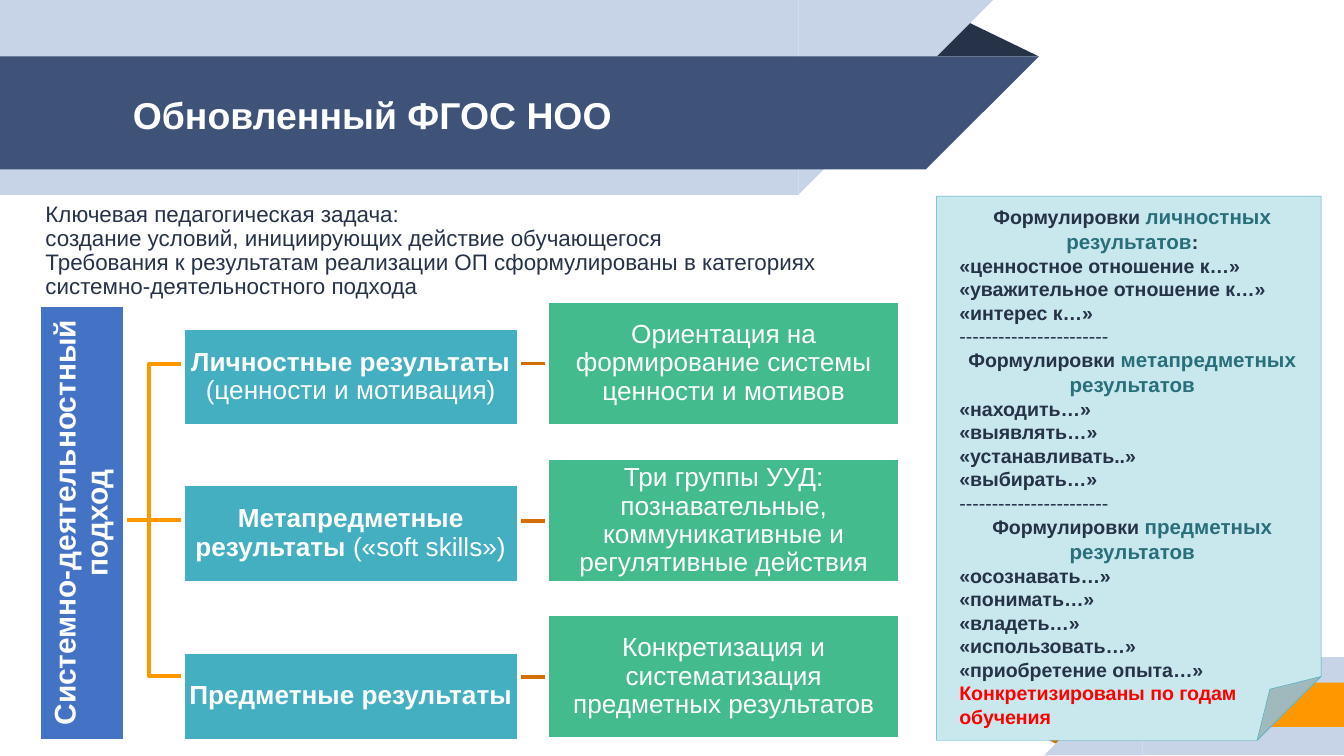
from pptx import Presentation
from pptx.dml.color import RGBColor
from pptx.enum.shapes import MSO_CONNECTOR as CONN, MSO_SHAPE as SHAPE
from pptx.enum.text import MSO_ANCHOR as ANCHOR, PP_ALIGN as ALIGN
from pptx.oxml.ns import qn
from pptx.oxml import parse_xml
from pptx.util import Pt

PX = 9144  # 100 px to the inch
NAVY, BLUE, PALE = "263248", "3F5378", "C7D3E6"
ORANGE, RUST, WHITE = "FF9800", "D26F00", "FFFFFF"
TEAL, GREEN, ROOT_BLUE = "43AFC0", "43BB8D", "4472C4"
DARK_TEAL, MINT, RED = "296F7B", "C9E8ED", "FF0000"
EFFECTS = '<a:effectLst xmlns:a="http://schemas.openxmlformats.org/drawingml/2006/main"/>'


def emu(*lengths):
    return [n * PX for n in lengths]


def rgb(value):
    return RGBColor.from_string(value)


def write(tf, paras, size=12, color=WHITE, bold=False, align=ALIGN.LEFT,
          spacing=None, anchor=ANCHOR.TOP, inset=(10, 5)):
    """Fill a frame; a paragraph is (runs, align or None), a run (text, overrides)."""
    tf.word_wrap = True
    tf.vertical_anchor = anchor
    tf.margin_left = tf.margin_right = inset[0] * PX
    tf.margin_top = tf.margin_bottom = inset[1] * PX
    for i, (runs, own_align) in enumerate(paras):
        p = tf.add_paragraph() if i else tf.paragraphs[0]
        p.alignment = own_align or align
        if spacing:
            p.line_spacing = spacing
        for words, own in runs:
            for j, part in enumerate(words.split("\n")):
                if j:
                    p.add_line_break()
                r = p.add_run()
                r.text = part
                r.font.name = "Arial"
                r.font.size = Pt(own.get("size", size))
                r.font.bold = own.get("bold", bold)
                r.font.color.rgb = rgb(own.get("color", color))


def plain(words, **own):
    return [([(words, own)], None)]


def add_text(s, box, paras, **fmt):
    tb = s.shapes.add_textbox(*emu(*box))
    write(tb.text_frame, paras, **fmt)


def add_shape(s, kind, box, fill, line=None, width=2, flip=None):
    sp = s.shapes.add_shape(kind, *emu(*box))
    sp.shadow.inherit = False
    sp.fill.solid()
    sp.fill.fore_color.rgb = rgb(fill)
    if line:
        sp.line.color.rgb = rgb(line)
        sp.line.width = Pt(width)
    else:
        sp.line.fill.background()
    if flip:
        sp.element.spPr.xfrm.set(flip, "1")
    return sp


def add_line(s, kind, ends, color):
    cx = s.shapes.add_connector(kind, *emu(*ends))
    cx.line.color.rgb = rgb(color)
    cx.line.width = Pt(2)
    cx.element.spPr.append(parse_xml(EFFECTS))
    return cx


def banner(s, x, y, title):
    fold = add_shape(s, SHAPE.ISOSCELES_TRIANGLE, (x + 688, y + 14, 85, 28), NAVY)
    fold.adjustments[0] = 0.32
    for top, w, h, fill in ((0, 594, 145, PALE), (42, 689, 84, BLUE)):
        add_shape(s, SHAPE.RECTANGLE, (x, y + top, w, h), fill)
        add_shape(s, SHAPE.RIGHT_TRIANGLE, (x + w, y + top, h, h), fill, flip="flipV")
    add_text(s, (x + 89, y + 43, 661, 84), plain(title), size=20, bold=True,
             anchor=ANCHOR.MIDDLE, inset=(10, 10))


def corner(s, x, y, right):
    fold = add_shape(s, SHAPE.ISOSCELES_TRIANGLE, (x, y + 52, 43, 14), RUST)
    fold.adjustments[0] = 0.32
    fold.rotation = 180
    for left, top, h, fill in ((17, 0, 73, PALE), (0, 19, 33, ORANGE)):
        start = x + left + h
        add_shape(s, SHAPE.RECTANGLE, (start, y + top, right - start, h), fill)
        add_shape(s, SHAPE.RIGHT_TRIANGLE, (x + left, y + top, h, h), fill, flip="flipH")


def scheme(s, x, y, root_text, rows):
    """Root bar on the left, then one result and one explanation per row."""
    pitch, mid, cell_h = 116, 47, 93
    hub = y + mid + pitch
    cell = dict(size=14, align=ALIGN.CENTER, spacing=0.9, anchor=ANCHOR.MIDDLE,
                inset=(1, 1))

    # Branches lie under the boxes
    for i in range(len(rows)):
        row_y = y + mid + i * pitch
        kind = CONN.STRAIGHT if row_y == hub else CONN.ELBOW
        add_line(s, kind, (x + 57, hub, x + 107, row_y), ORANGE)

    root = add_shape(s, SHAPE.RECTANGLE, (x, y + 3, 64, 324), ROOT_BLUE, WHITE)
    write(root.text_frame, plain(root_text), **{**cell, "size": 16, "bold": True})
    root.element.txBody.find(qn("a:bodyPr")).set("vert", "vert270")

    for i, (top, h, runs, meaning) in enumerate(rows):
        row_y = y + i * pitch + (i > 0)
        result = add_shape(s, SHAPE.RECTANGLE, (x + 107, y + top, 250, h), TEAL, WHITE)
        write(result.text_frame, [(runs, None)], **cell)
        note = add_shape(s, SHAPE.RECTANGLE, (x + 378, row_y, 263, cell_h), GREEN, WHITE)
        write(note.text_frame, plain(meaning), **cell)
        link = add_line(s, CONN.STRAIGHT,
                        (x + 357, row_y + mid, x + 378, row_y + mid), RUST)
        link.end_connect(note, 1)
        link.begin_y = link.end_y
        result.element.addprevious(link.element)


def sidebar(s, x, y, w, h, groups, closing):
    add_shape(s, SHAPE.FOLDED_CORNER, (x, y, w, h), MINT, TEAL, 0.25)
    paras = []
    for i, (kind, tail, phrases) in enumerate(groups):
        if i:
            paras += plain("-" * 23, bold=False)
        head = [("Формулировки ", {}),
                (f"{kind} результатов", dict(size=11, color=DARK_TEAL))]
        if tail:
            head.append((tail, {}))
        paras.append((head, ALIGN.CENTER))
        for phrase in phrases:
            paras += plain(f"«{phrase}»")
    paras += plain(closing, color=RED)
    add_text(s, (x + 7, y + 1, w - 9, h - 1), paras, size=10.5, color=NAVY, bold=True)


INTRO = ("Ключевая педагогическая задача: \n"
         "создание условий, инициирующих действие обучающегося\n"
         "Требования к результатам реализации ОП сформулированы в категориях "
         "системно-деятельностного подхода")
BOLD = {"bold": True}
ROWS = [  # result top, height, runs, explanation
    (20, 73, [("Личностные результаты ", BOLD), ("(ценности и мотивация)", {})],
     "Ориентация на формирование системы ценности и мотивов"),
    (136, 74, [("Метапредметные результаты ", BOLD), ("(«soft skills»)", {})],
     "Три группы УУД: познавательные, коммуникативные и регулятивные действия"),
    (261, 66, [("Предметные результаты", BOLD)],
     "Конкретизация и систематизация предметных результатов"),
]
GROUPS = [  # kind of results, heading tail, phrases
    ("личностных", ":",
     ["ценностное отношение к…", "уважительное отношение к…", "интерес к…"]),
    ("метапредметных", "", ["находить…", "выявлять…", "устанавливать..", "выбирать…"]),
    ("предметных", "",
     ["осознавать…", "понимать…", "владеть…", "использовать…", "приобретение опыта…"]),
]


def main():
    prs = Presentation()
    prs.slide_width = 1000 * PX
    prs.slide_height = prs.slide_width * 9 // 16
    s = prs.slides.add_slide(prs.slide_layouts[6])
    banner(s, 0, 0, "Обновленный ФГОС НОО")
    corner(s, 760, 489, 1000)
    add_text(s, (24, 146, 627, 157), plain(INTRO), color=NAVY, spacing=0.9)
    scheme(s, 29, 224, "Системно-деятельностный подход", ROWS)
    sidebar(s, 697, 146, 286, 405, GROUPS, "Конкретизированы по годам обучения")
    prs.save("out.pptx")


if __name__ == "__main__":
    main()
